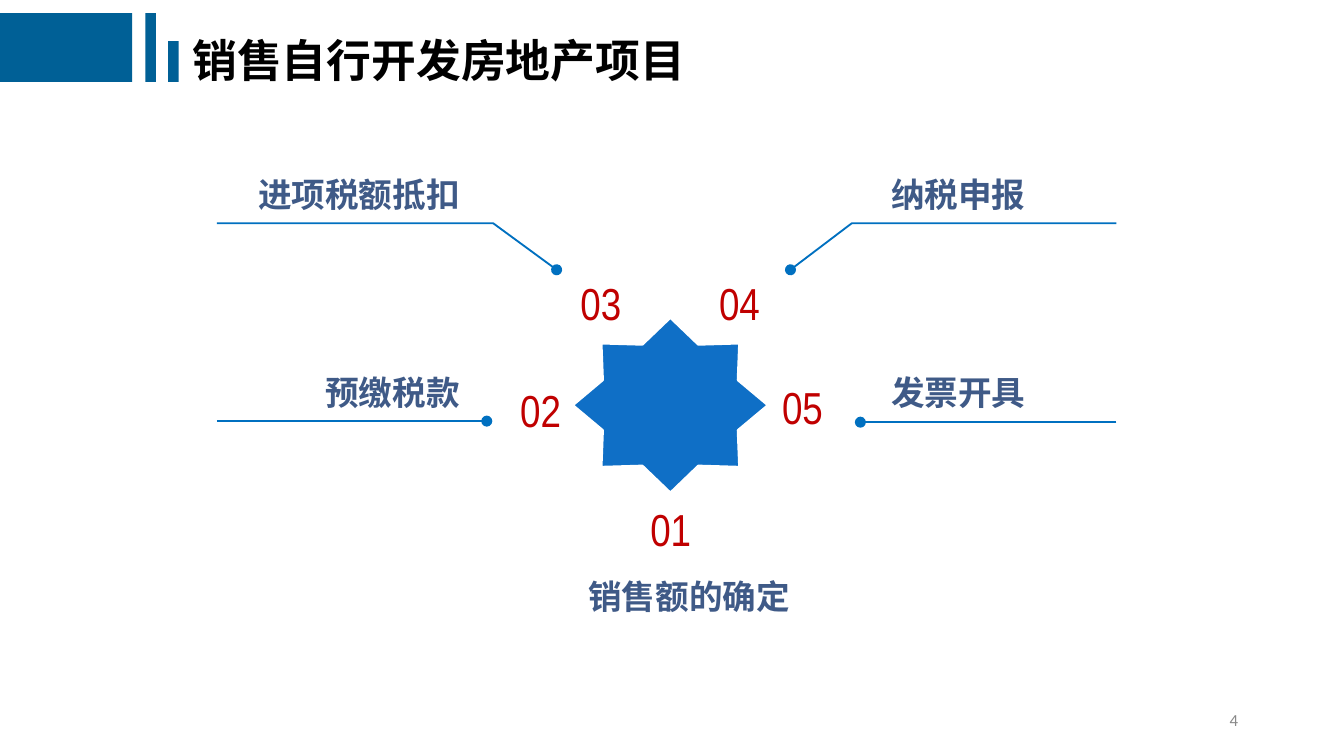
from lxml import etree
from pptx import Presentation
from pptx.dml.color import RGBColor
from pptx.enum.shapes import MSO_CONNECTOR, MSO_SHAPE as Shape
from pptx.enum.text import MSO_ANCHOR as Anchor, MSO_AUTO_SIZE as AutoSize, PP_ALIGN as Align
from pptx.oxml.ns import qn
from pptx.util import Cm, Pt

BAR_BLUE = RGBColor(0x00, 0x60, 0x96)
LINE_BLUE = RGBColor(0x00, 0x70, 0xC0)
STAR_BLUE = RGBColor(0x0F, 0x6F, 0xC6)
LABEL_BLUE = RGBColor(0x3F, 0x5A, 0x87)
RED = RGBColor(0xC0, 0x00, 0x00)
GREY = RGBColor(0x89, 0x89, 0x89)
BLACK = RGBColor(0x00, 0x00, 0x00)
WHITE = RGBColor(0xFF, 0xFF, 0xFF)

CJK_FONT = "Noto Sans CJK SC"
NUMBER_FONT = "Arial Narrow"
PAGE_FONT = "Calibri"


class SlideBuilder:
    """Draws styled elements on one slide; all lengths are in centimetres."""

    def __init__(self, slide):
        self.slide = slide
        self.shapes = slide.shapes

    def set_text(self, sp, text, size, color, font=CJK_FONT, bold=False,
                 align=Align.LEFT, anchor=Anchor.TOP, wrap=True, spacing=None):
        tf = sp.text_frame
        tf.auto_size = AutoSize.NONE
        tf.word_wrap = wrap
        tf.vertical_anchor = anchor
        p = tf.paragraphs[0]
        p.alignment = align
        p.line_spacing = spacing
        r = p.add_run()
        r.text = text
        r.font.name, r.font.size, r.font.bold = font, Pt(size), bold
        r.font.color.rgb = color
        etree.SubElement(r.font._element, qn("a:ea"), typeface=font)

    def title(self, text, x, y, w, h, **style):
        sp = self.shapes.title
        sp.left, sp.top, sp.width, sp.height = Cm(x), Cm(y), Cm(w), Cm(h)
        self.set_text(sp, text, **style)

    def text(self, text, x, y, w, h, **style):
        sp = self.shapes.add_textbox(Cm(x), Cm(y), Cm(w), Cm(h))
        self.set_text(sp, text, **style)

    def shape(self, kind, x, y, w, h, fill, outline=None):
        sp = self.shapes.add_shape(kind, Cm(x), Cm(y), Cm(w), Cm(h))
        sp.shadow.inherit = False
        sp.fill.solid()
        sp.fill.fore_color.rgb = fill
        if outline is None:
            sp.line.fill.background()
        else:
            sp.line.color.rgb = outline
            sp.line.width = Pt(1.5)
        return sp

    def leader(self, *points):
        """Line through the points, ending in a dot."""
        points = [(Cm(x), Cm(y)) for x, y in points]
        if len(points) == 2:
            sp = self.shapes.add_connector(MSO_CONNECTOR.STRAIGHT, *points[0], *points[1])
        else:
            builder = self.shapes.build_freeform(*points[0])
            builder.add_line_segments(points[1:], close=False)
            sp = builder.convert_to_shape()
            sp.fill.background()
        sp.line.color.rgb = LINE_BLUE
        sp.line.width = Pt(1)
        properties = sp._element.spPr
        etree.SubElement(properties.find(qn("a:ln")), qn("a:tailEnd"), type="oval")
        etree.SubElement(properties, qn("a:effectLst"))


def main():
    prs = Presentation()
    prs.slide_width, prs.slide_height = Cm(25.4), Cm(14.29)
    s = SlideBuilder(prs.slides.add_slide(prs.slide_layouts[5]))

    for x, y, w, h in [(0, 0.25, 2.5, 1.3), (2.75, 0.25, 0.2, 1.3), (3.18, 0.78, 0.2, 0.77)]:
        s.shape(Shape.RECTANGLE, x, y, w, h, BAR_BLUE)
    s.title("销售自行开发房地产项目", 3.38, 0.5, 13.5, 1.3, size=24, color=BLACK, bold=True)

    left, right = 4.1, 21.1
    s.leader((left, 7.96), (9.2, 7.96))
    s.leader((left, 4.22), (9.32, 4.22), (10.52, 5.1))
    s.leader((right, 7.98), (16.26, 7.98))
    s.leader((right, 4.22), (16.1, 4.22), (14.94, 5.1))

    for text, x, y, w, align in [
        ("进项税额抵扣", 4.14, 3.25, 4.8, Align.RIGHT),
        ("预缴税款", 0.08, 6.99, 8.86, Align.RIGHT),
        ("销售额的确定", 10.87, 10.85, 5.8, Align.LEFT),
        ("纳税申报", 16.59, 3.25, 6.38, Align.LEFT),
        ("发票开具", 16.59, 6.99, 7.06, Align.LEFT),
    ]:
        s.text(text, x, y, w, 0.94, size=18, color=LABEL_BLUE, bold=True,
               align=align, spacing=0.9)

    for text, x, y in [("03", 10.72, 5.08), ("02", 9.58, 7.11), ("04", 13.34, 5.08),
                       ("05", 14.53, 7.06), ("01", 12.04, 9.35)]:
        s.text(text, x, y, 1.4, 1.28, size=24, color=RED, font=NUMBER_FONT, wrap=False)

    star = s.shape(Shape.STAR_8_POINT, 10.82, 6, 3.7, 3.32, STAR_BLUE, outline=WHITE)
    star.adjustments[0] = 0.375
    s.text("4", 17.93, 13.23, 5.72, 0.76, size=9, color=GREY, font=PAGE_FONT,
           align=Align.RIGHT, anchor=Anchor.MIDDLE)

    prs.save("out.pptx")


if __name__ == "__main__":
    main()
